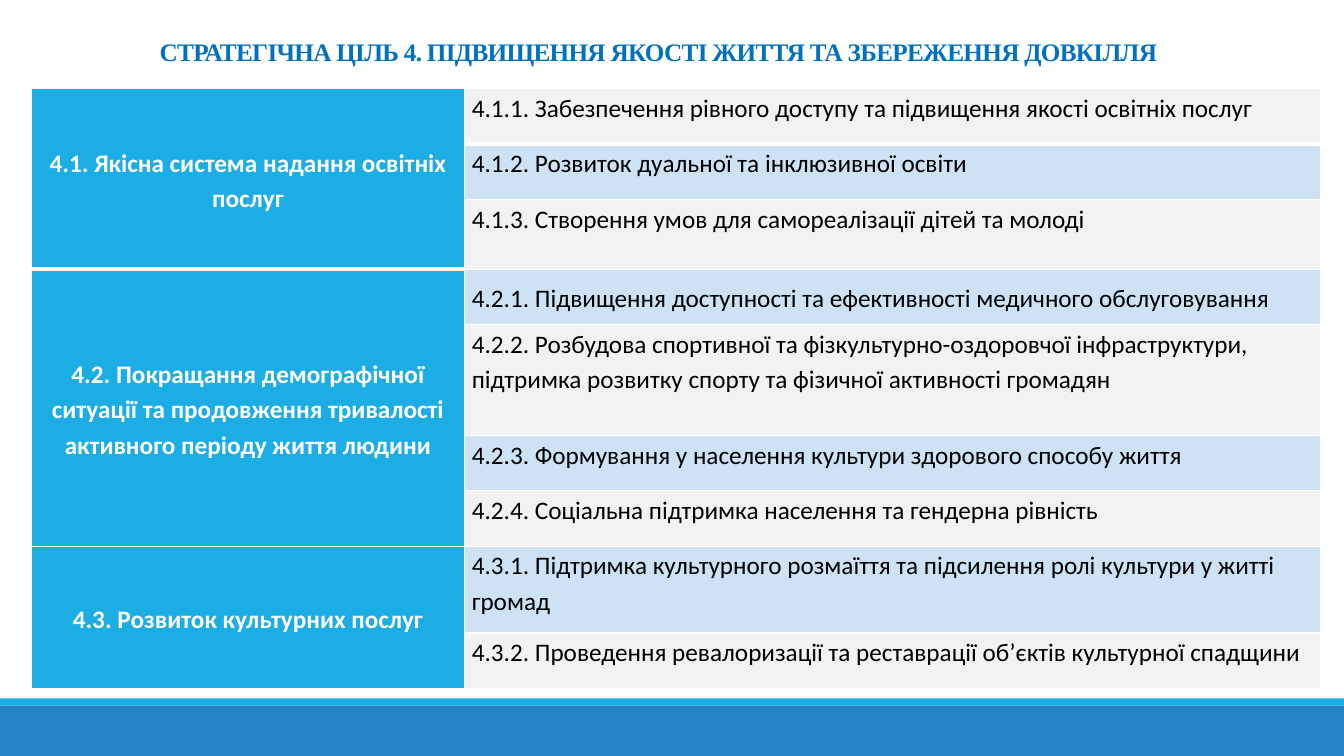
from lxml import etree
from pptx import Presentation
from pptx.dml.color import RGBColor
from pptx.enum.shapes import MSO_SHAPE
from pptx.enum.text import MSO_ANCHOR, PP_ALIGN
from pptx.oxml.ns import qn
from pptx.util import Inches, Pt

RECT = MSO_SHAPE.RECTANGLE
CENTER, LEFT = PP_ALIGN.CENTER, PP_ALIGN.LEFT
MIDDLE, TOP = MSO_ANCHOR.MIDDLE, MSO_ANCHOR.TOP

COLORS = {
    "title": "0070C0", "goal": "1CADE4", "footer": "2683C6",
    "grey": "F2F2F2", "blue": "CDE3F5", "white": "FFFFFF", "black": "000000",
}
TITLE = "СТРАТЕГІЧНА ЦІЛЬ 4. ПІДВИЩЕННЯ ЯКОСТІ ЖИТТЯ ТА ЗБЕРЕЖЕННЯ ДОВКІЛЛЯ"
TITLE_FONT = {"name": "Times New Roman", "size": Pt(18), "bold": True}
GOAL_FONT = {"name": "Calibri", "size": Pt(18), "bold": True}
TASK_FONT = {"name": "Calibri", "size": Pt(18), "bold": False}
COL_WIDTHS = [4.3, 8.49]
ROW_HEIGHTS = [0.55, 0.55, 0.69, 0.55, 1.1, 0.55, 0.55, 0.86, 0.55]
MIDDLE_TASK = "4.2.1."

GOALS = [
    ("4.1. Якісна система надання освітніх послуг", [
        "4.1.1. Забезпечення рівного доступу та підвищення якості освітніх послуг",
        "4.1.2. Розвиток дуальної та інклюзивної освіти",
        "4.1.3. Створення умов для самореалізації дітей та молоді",
    ]),
    ("4.2. Покращання демографічної ситуації та продовження тривалості "
     "активного періоду життя людини", [
        "4.2.1. Підвищення доступності та ефективності медичного обслуговування",
        "4.2.2. Розбудова спортивної та фізкультурно-оздоровчої інфраструктури, "
        "підтримка розвитку спорту та фізичної активності громадян",
        "4.2.3. Формування у населення культури здорового способу життя",
        "4.2.4. Соціальна підтримка населення та гендерна рівність",
    ]),
    ("4.3. Розвиток культурних послуг", [
        "4.3.1. Підтримка культурного розмаїття та підсилення ролі культури "
        "у житті громад",
        "4.3.2. Проведення ревалоризації та реставрації об’єктів культурної спадщини",
    ]),
]


def rgb(name):
    return RGBColor.from_string(COLORS[name])


def write(tf, text, font, color, align):
    p = tf.paragraphs[0]
    p.alignment = align
    r = p.add_run()
    r.text = text
    for key, value in font.items():
        setattr(r.font, key, value)
    r.font.color.rgb = rgb(color)
    return p, r


def add_band(s, top, height, color):
    sp = s.shapes.add_shape(RECT, 0, Inches(top), Inches(13.33), Inches(height))
    sp.shadow.inherit = False
    sp.fill.solid()
    sp.fill.fore_color.rgb = rgb(color)
    sp.line.fill.background()


def add_title(s):
    sp = s.shapes.add_textbox(Inches(0.48), Inches(0.31), Inches(12.1), Inches(0.4))
    sp.text_frame.word_wrap = True
    p, r = write(sp.text_frame, TITLE, TITLE_FONT, "title", CENTER)
    r.font._element.set("spc", "-50")


def style_cell(cell, fill, bottom):
    """Set the fill, the margins and the white borders; bottom is in points."""
    tc_pr = cell._tc.get_or_add_tcPr()
    for side, width in {"L": 1, "R": 1, "T": 1, "B": bottom}.items():
        ln = etree.SubElement(tc_pr, qn(f"a:ln{side}"), w=str(Pt(width)))
        solid = etree.SubElement(ln, qn("a:solidFill"))
        etree.SubElement(solid, qn("a:srgbClr"), val=COLORS["white"])
    cell.fill.solid()
    cell.fill.fore_color.rgb = rgb(fill)
    cell.margin_left = cell.margin_right = Inches(0.07)
    cell.margin_top = cell.margin_bottom = 0


def fill_cell(cell, text, font, color, align, anchor):
    p, r = write(cell.text_frame, text, font, color, align)
    p.line_spacing = 1.15
    cell.vertical_anchor = anchor


def add_goal_table(s):
    frame = s.shapes.add_table(len(ROW_HEIGHTS), len(COL_WIDTHS), Inches(0.31), Inches(0.88),
                               Inches(sum(COL_WIDTHS)), Inches(sum(ROW_HEIGHTS)))
    table = frame.table
    table.first_row = table.horz_banding = False
    for col, width in zip(table.columns, COL_WIDTHS):
        col.width = Inches(width)
    for i, height in enumerate(ROW_HEIGHTS):
        table.rows[i].height = Inches(height)
        bottom = 3 if i == 0 else 1
        goal_bottom = 3 if i < len(GOALS[0][1]) else 1
        style_cell(table.cell(i, 0), "goal", goal_bottom)
        style_cell(table.cell(i, 1), "blue" if i % 2 else "grey", bottom)

    row = 0
    for goal, tasks in GOALS:
        cell = table.cell(row, 0)
        cell.merge(table.cell(row + len(tasks) - 1, 0))
        fill_cell(cell, goal, GOAL_FONT, "white", CENTER, MIDDLE)
        for task in tasks:
            anchor = MIDDLE if task.startswith(MIDDLE_TASK) else TOP
            fill_cell(table.cell(row, 1), task, TASK_FONT, "black", LEFT, anchor)
            row += 1


def main():
    prs = Presentation()
    prs.slide_width, prs.slide_height = Inches(13.33), Inches(7.5)
    s = prs.slides.add_slide(prs.slide_layouts[6])
    add_band(s, 7, 0.5, "footer")
    add_band(s, 6.93, 0.07, "goal")
    add_title(s)
    add_goal_table(s)
    prs.save("out.pptx")


if __name__ == "__main__":
    main()
